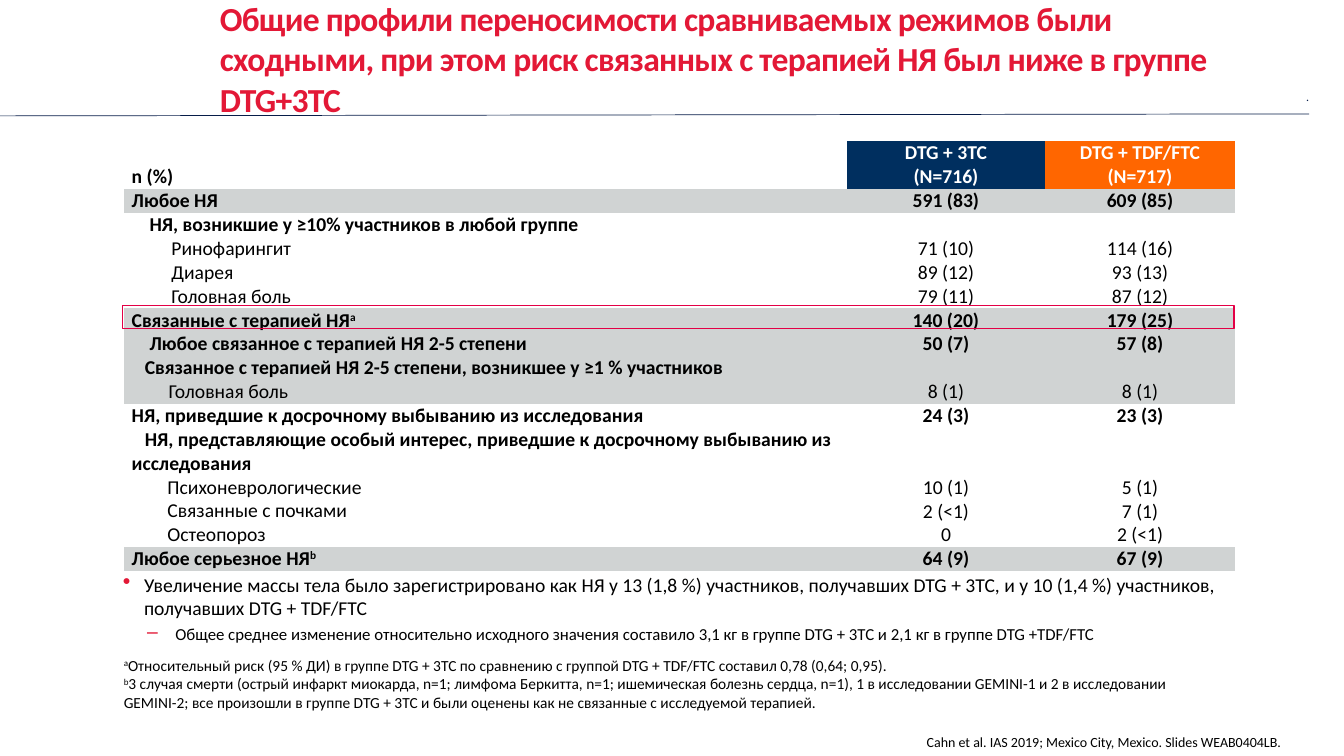
from lxml import etree
from pptx import Presentation
from pptx.dml.color import RGBColor
from pptx.enum.shapes import MSO_CONNECTOR, MSO_SHAPE
from pptx.enum.text import MSO_ANCHOR, MSO_AUTO_SIZE, PP_ALIGN
from pptx.oxml.ns import qn
from pptx.util import Cm, Pt

LEFT, CENTER, RIGHT = PP_ALIGN.LEFT, PP_ALIGN.CENTER, PP_ALIGN.RIGHT
TOP, MIDDLE, BOTTOM = MSO_ANCHOR.TOP, MSO_ANCHOR.MIDDLE, MSO_ANCHOR.BOTTOM
RED, NAVY, BLUE, ORANGE = "E31836", "071D49", "002F5F", "FF6600"
GREY, BLACK, WHITE, FRAME = "D0D3D3", "000000", "FFFFFF", "E30046"
TITLE_ONLY = 5
NO_GRID_STYLE = "{2D5ABB26-0587-4C30-8999-92F81FD0307C}"
LINE_CM = 0.6      # height of one 14 pt table line
LINE_PT = 17.1


def color(value):
    return RGBColor.from_string(value)


class Slide:
    """Style and drawing methods for the current slide."""
    font = "Calibri"

    def __init__(self, deck):
        self.page = deck.slides.add_slide(deck.slide_layouts[TITLE_ONLY])

    def paragraph(self, para, text, size=14, ink=BLACK, bold=False, align=LEFT,
                  before=0, after=0, margin=0, indent=0, bullet=None, tracking=0,
                  spacing=None):
        """Fill a paragraph; parts between ^ signs are superscript."""
        props = para._p.get_or_add_pPr()
        props.set("marL", str(Cm(margin)))
        props.set("indent", str(Cm(indent)))
        if bullet:
            tint = etree.SubElement(props, qn("a:buClr"))
            etree.SubElement(tint, qn("a:srgbClr"), val=RED)
            etree.SubElement(props, qn("a:buSzPct"), val="115000")
            etree.SubElement(props, qn("a:buChar"), char=bullet)
        para.alignment = align
        para.space_before, para.space_after = Pt(before), Pt(after)
        para.line_spacing = spacing
        para.font.name, para.font.size, para.font.bold = self.font, Pt(size), bold
        para.font.color.rgb = color(ink)
        for number, part in enumerate(text.split("^")):
            for row, piece in enumerate(part.split("\n")):
                if row:
                    para.add_line_break()
                if not piece:
                    continue
                span = para.add_run()
                span.text = piece
                if number % 2:
                    span._r.get_or_add_rPr().set("baseline", "30000")
                if tracking:
                    span._r.get_or_add_rPr().set("spc", str(tracking))

    def fill_frame(self, frame, paragraphs, anchor=TOP, **style):
        frame.word_wrap = True
        frame.auto_size = MSO_AUTO_SIZE.NONE
        frame.vertical_anchor = anchor
        frame.margin_left = frame.margin_right = frame.margin_top = frame.margin_bottom = 0
        self.paragraphs(frame, paragraphs, **style)

    def paragraphs(self, frame, paragraphs, **style):
        for number, (text, own) in enumerate(paragraphs):
            para = frame.add_paragraph() if number else frame.paragraphs[0]
            self.paragraph(para, text, **{**style, **own})

    def title(self, text, left, top, width, height):
        box = self.page.shapes.title
        box.left, box.top, box.width, box.height = Cm(left), Cm(top), Cm(width), Cm(height)
        self.fill_frame(box.text_frame, [(text, {})], BOTTOM,
                        size=24, ink=RED, bold=True, tracking=-50)

    def text(self, paragraphs, left, top, width, height, anchor=TOP, **style):
        box = self.page.shapes.add_textbox(Cm(left), Cm(top), Cm(width), Cm(height))
        self.fill_frame(box.text_frame, paragraphs, anchor, **style)

    def rule(self, x1, y1, x2, y2):
        line = self.page.shapes.add_connector(
            MSO_CONNECTOR.STRAIGHT, Cm(x1), Cm(y1), Cm(x2), Cm(y2))
        line.line.color.rgb, line.line.width = color(NAVY), Pt(0.5)
        etree.SubElement(line._element.spPr, qn("a:effectLst"))

    def frame(self, left, top, width, height):
        box = self.page.shapes.add_shape(
            MSO_SHAPE.RECTANGLE, Cm(left), Cm(top), Cm(width), Cm(height))
        box.shadow.inherit = False
        box.fill.background()
        box.line.color.rgb, box.line.width = color(FRAME), Pt(0.75)

    def table(self, rows, left, top, widths):
        """Each row is (line count, anchors, fills, cells)."""
        height = sum(row[0] for row in rows) * LINE_CM
        shape = self.page.shapes.add_table(
            len(rows), len(widths), Cm(left), Cm(top), Cm(sum(widths)), Cm(height))
        table = shape.table
        table.first_row = table.horz_banding = False
        table._tbl.tblPr.find(qn("a:tableStyleId")).text = NO_GRID_STYLE
        for column, width in zip(table.columns, widths):
            column.width = Cm(width)
        for r, (lines, anchors, fills, cells) in enumerate(rows):
            table.rows[r].height = Cm(lines * LINE_CM)
            for c, paragraphs in enumerate(cells):
                cell = table.cell(r, c)
                cell.margin_left = cell.margin_right = Cm(0.2)
                cell.margin_top = cell.margin_bottom = 0
                cell.vertical_anchor = anchors[c]
                if fills[c]:
                    cell.fill.solid()
                    cell.fill.fore_color.rgb = color(fills[c])
                else:
                    cell.fill.background()
                self.paragraphs(cell.text_frame, paragraphs, align=CENTER if c else LEFT)


def bold(text, **style):
    return text, {"bold": True, **style}


def plain(text, **style):
    return text, style


def values(*texts, strong=0, gap_at=None, gap=0):
    """Number column: the first `strong` lines bold, with an optional gap."""
    return [(text, {"bold": n < strong, "before": gap * LINE_PT if n == gap_at else 0})
            for n, text in enumerate(texts)]


def main():
    deck = Presentation()
    deck.slide_width, deck.slide_height = Cm(33.87), Cm(19.05)
    slide = Slide(deck)

    # Heading
    slide.rule(0, 2.92, 32.99, 2.87)
    slide.text([plain(".")], 15.72, 2.29, 17.27, 0.3,
               size=8.5, ink=NAVY, align=RIGHT, spacing=0.9)
    slide.title("Общие профили переносимости сравниваемых режимов были сходными, при этом "
                "риск связанных с терапией НЯ был ниже в группе DTG+3TC",
                5.54, 1.37, 25.22, 1.63)

    # Adverse events table
    tops, clear, grey = [TOP] * 3, [None] * 3, [GREY] * 3
    rows = [
        (2, [BOTTOM] * 3, [None, BLUE, ORANGE], [
            [bold("n (%)")],
            [bold("DTG + 3TC\n(N=716)", ink=WHITE)],
            [bold("DTG + TDF/FTC\n(N=717)", ink=WHITE)]]),
        (1, tops, grey, [
            [bold("Любое НЯ")], values("591 (83)", strong=1), values("609 (85)", strong=1)]),
        (4, [TOP, BOTTOM, BOTTOM], clear, [
            [bold("НЯ, возникшие у ≥10% участников в любой группе", indent=0.45)]
            + [plain(name, margin=1) for name in ("Ринофарингит", "Диарея", "Головная боль")],
            values("71 (10)", "89 (12)", "79 (11)"),
            values("114 (16)", "93 (13)", "87 (12)")]),
        (4, tops, grey, [
            [bold("Связанные с терапией НЯ^a^"),
             bold("Любое связанное с терапией НЯ 2-5 степени", indent=0.45),
             bold("Связанное с терапией НЯ 2-5 степени, возникшее у ≥1 % участников",
                  indent=0.33),
             plain("Головная боль", margin=0.93)],
            values("140 (20)", "50 (7)", "8 (1)", strong=2, gap_at=2, gap=1),
            values("179 (25)", "57 (8)", "8 (1)", strong=2, gap_at=2, gap=1)]),
        (6, tops, clear, [
            [bold("НЯ, приведшие к досрочному выбыванию из исследования"),
             bold("НЯ, представляющие особый интерес, приведшие к досрочному "
                  "выбыванию из исследования", indent=0.33)]
            + [plain(name, margin=0.9)
               for name in ("Психоневрологические", "Связанные с почками", "Остеопороз")],
            values("24 (3)", "10 (1)", "2 (<1)", "0", strong=1, gap_at=1, gap=2),
            values("23 (3)", "5 (1)", "7 (1)", "2 (<1)", strong=1, gap_at=1, gap=2)]),
        (1, [MIDDLE] * 3, grey, [
            [bold("Любое серьезное НЯ^b^")],
            values("64 (9)", strong=1), values("67 (9)", strong=1)]),
    ]
    slide.table(rows, 3.12, 3.56, [18.22, 5, 4.78])

    # Weight findings
    slide.text([
        plain("Увеличение массы тела было зарегистрировано как НЯ у 13 (1,8 %) участников, "
              "получавших DTG + 3TC, и у 10 (1,4 %) участников, получавших DTG + TDF/FTC",
              margin=0.53, indent=-0.53, bullet="•"),
        plain("Общее среднее изменение относительно исходного значения составило 3,1 кг "
              "в группе DTG + 3TC и 2,1 кг в группе DTG +TDF/FTC",
              size=12, margin=1.32, indent=-0.71, bullet="–"),
    ], 3.1, 14.43, 28.17, 2.11, after=3)

    # Footnotes and source
    slide.text([plain(
        "^a^Относительный риск (95 % ДИ) в группе DTG + 3TC по сравнению с группой "
        "DTG + TDF/FTC составил 0,78 (0,64; 0,95).\n"
        "^b^3 случая смерти (острый инфаркт миокарда, n=1; лимфома Беркитта, n=1; "
        "ишемическая болезнь сердца, n=1), 1 в исследовании GEMINI-1 и 2 в исследовании "
        "GEMINI-2; все произошли в группе DTG + 3TC и были оценены как не связанные "
        "с исследуемой терапией.")], 3.12, 15.39, 27.66, 2.54, BOTTOM, size=11, after=3)
    slide.text([plain("Cahn et al. IAS 2019; Mexico City, Mexico. Slides WEAB0404LB.")],
               9.42, 18.49, 22.86, 0.51, size=10, align=RIGHT, after=3)

    # Highlighted row
    slide.frame(3.1, 7.7, 28, 0.58)

    deck.save("out.pptx")


if __name__ == "__main__":
    main()
